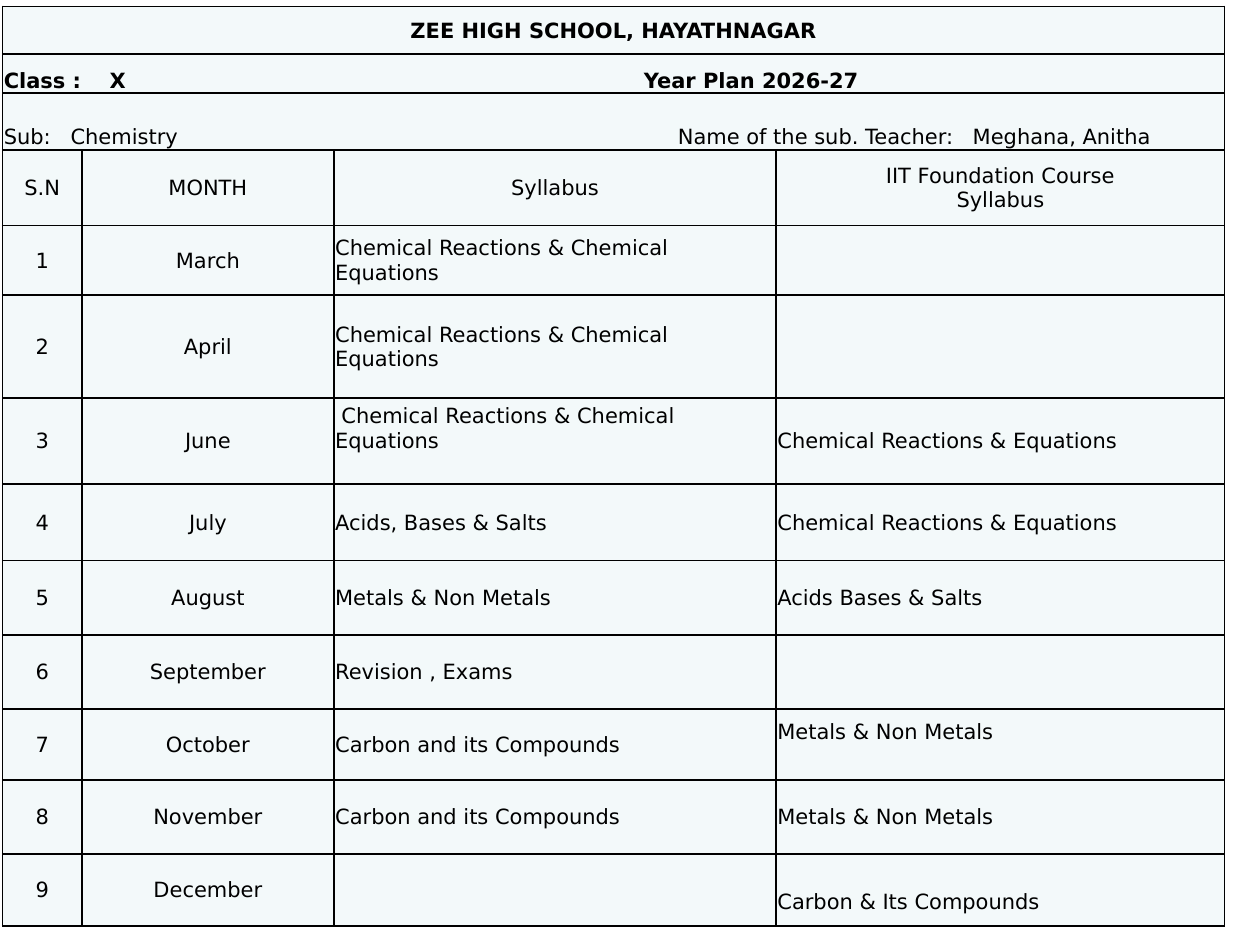
from dataclasses import dataclass

from lxml import etree
from pptx import Presentation
from pptx.dml.color import RGBColor
from pptx.enum.text import MSO_ANCHOR, PP_ALIGN
from pptx.oxml.ns import qn
from pptx.table import Table, _Cell
from pptx.util import Inches, Pt

CENTER, LEFT = PP_ALIGN.CENTER, PP_ALIGN.LEFT
MIDDLE, BOTTOM = MSO_ANCHOR.MIDDLE, MSO_ANCHOR.BOTTOM

COLORS = {"cell": "F3F9FA", "text": "000000", "border": "000000"}
FONT = "DejaVu Sans"
FONT_SIZE = Pt(12)
BORDER_WIDTH = Pt(1)
LINE_SHIFT = 0.2

COLUMN_WIDTHS = (0.63, 2, 3.51, 3.56)
ROW_HEIGHTS = (0.38, 0.31, 0.45, 0.6, 0.55, 0.82, 0.68, 0.61, 0.59, 0.59, 0.56, 0.59, 0.57)


@dataclass(frozen=True)
class Entry:
    text: str = ""
    align: PP_ALIGN = LEFT
    anchor: MSO_ANCHOR = MIDDLE
    bold: bool = False
    tabs: tuple[float, ...] = ()
    indent: float = 0
    top: float = 0.01
    bottom: float = 0


@dataclass(frozen=True)
class Month:
    name: str
    syllabus: Entry = Entry()
    foundation: Entry = Entry()


BANNERS = (
    Entry("ZEE HIGH SCHOOL, HAYATHNAGAR", CENTER, bold=True),
    Entry("Class :\tX\tYear Plan 2026-27", anchor=BOTTOM, bold=True, tabs=(0.84, 5.08)),
    Entry(
        "Sub:\tChemistry\tName of the sub. Teacher:\tMeghana, Anitha",
        anchor=BOTTOM,
        tabs=(0.53, 5.35, 7.69),
    ),
)
HEADINGS = ("S.N", "MONTH", "Syllabus", "IIT Foundation Course\nSyllabus")
REACTIONS = "Chemical Reactions & Chemical Equations"
MONTHS = (
    Month("March", Entry(REACTIONS)),
    Month("April", Entry(REACTIONS)),
    Month(
        "June",
        Entry(REACTIONS, indent=0.05, bottom=LINE_SHIFT),
        Entry("Chemical Reactions & Equations"),
    ),
    Month("July", Entry("Acids, Bases & Salts"), Entry("Chemical Reactions & Equations")),
    Month("August", Entry("Metals & Non Metals"), Entry("Acids Bases & Salts")),
    Month("September", Entry("Revision , Exams")),
    Month(
        "October",
        Entry("Carbon and its Compounds"),
        Entry("Metals & Non Metals", bottom=LINE_SHIFT),
    ),
    Month("November", Entry("Carbon and its Compounds"), Entry("Metals & Non Metals")),
    Month("December", foundation=Entry("Carbon & Its Compounds", top=LINE_SHIFT)),
)


def style_cell(cell: _Cell) -> None:
    cell.fill.solid()
    cell.fill.fore_color.rgb = RGBColor.from_string(COLORS["cell"])
    properties = cell._tc.get_or_add_tcPr()
    for position, side in enumerate(("a:lnL", "a:lnR", "a:lnT", "a:lnB")):
        border = etree.Element(qn(side), w=str(BORDER_WIDTH))
        fill = etree.SubElement(border, qn("a:solidFill"))
        etree.SubElement(fill, qn("a:srgbClr"), val=COLORS["border"])
        properties.insert(position, border)


def write_cell(cell: _Cell, entry: Entry) -> None:
    cell.margin_left = cell.margin_right = Inches(0.01)
    cell.margin_top, cell.margin_bottom = Inches(entry.top), Inches(entry.bottom)
    cell.vertical_anchor = entry.anchor
    cell.text_frame.text = entry.text
    for para in cell.text_frame.paragraphs:
        para.alignment = entry.align
        properties = para._p.get_or_add_pPr()
        if entry.indent:
            properties.set("indent", str(Inches(entry.indent)))
        if entry.tabs:
            tab_list = etree.SubElement(properties, qn("a:tabLst"))
            for stop in entry.tabs:
                etree.SubElement(tab_list, qn("a:tab"), pos=str(Inches(stop)), algn="l")
        para.font.size = FONT_SIZE
        for span in para.runs:
            span.font.name = FONT
            span.font.size = FONT_SIZE
            span.font.bold = entry.bold
            span.font.color.rgb = RGBColor.from_string(COLORS["text"])


def write_row(table: Table, row: int, entries: list[Entry]) -> None:
    for column, entry in enumerate(entries):
        write_cell(table.cell(row, column), entry)


def main() -> None:
    deck = Presentation()
    deck.slide_width, deck.slide_height = Inches(10), Inches(7.5)
    page = deck.slides.add_slide(deck.slide_layouts[6])
    table = page.shapes.add_table(
        len(ROW_HEIGHTS), len(COLUMN_WIDTHS), Inches(0.02), Inches(0.05),
        Inches(sum(COLUMN_WIDTHS)), Inches(sum(ROW_HEIGHTS)),
    ).table
    table.first_row = table.horz_banding = False
    for column, width in zip(table.columns, COLUMN_WIDTHS):
        column.width = Inches(width)
    for row, height in zip(table.rows, ROW_HEIGHTS):
        row.height = Inches(height)
    for cell in table.iter_cells():
        style_cell(cell)

    for row, banner in enumerate(BANNERS):
        table.cell(row, 0).merge(table.cell(row, len(COLUMN_WIDTHS) - 1))
        write_cell(table.cell(row, 0), banner)
    heading_row = len(BANNERS)
    write_row(table, heading_row, [Entry(heading, CENTER) for heading in HEADINGS])
    for number, month in enumerate(MONTHS, start=1):
        labels = [Entry(str(number), CENTER), Entry(month.name, CENTER)]
        write_row(table, heading_row + number, [*labels, month.syllabus, month.foundation])

    deck.save("out.pptx")


if __name__ == "__main__":
    main()
